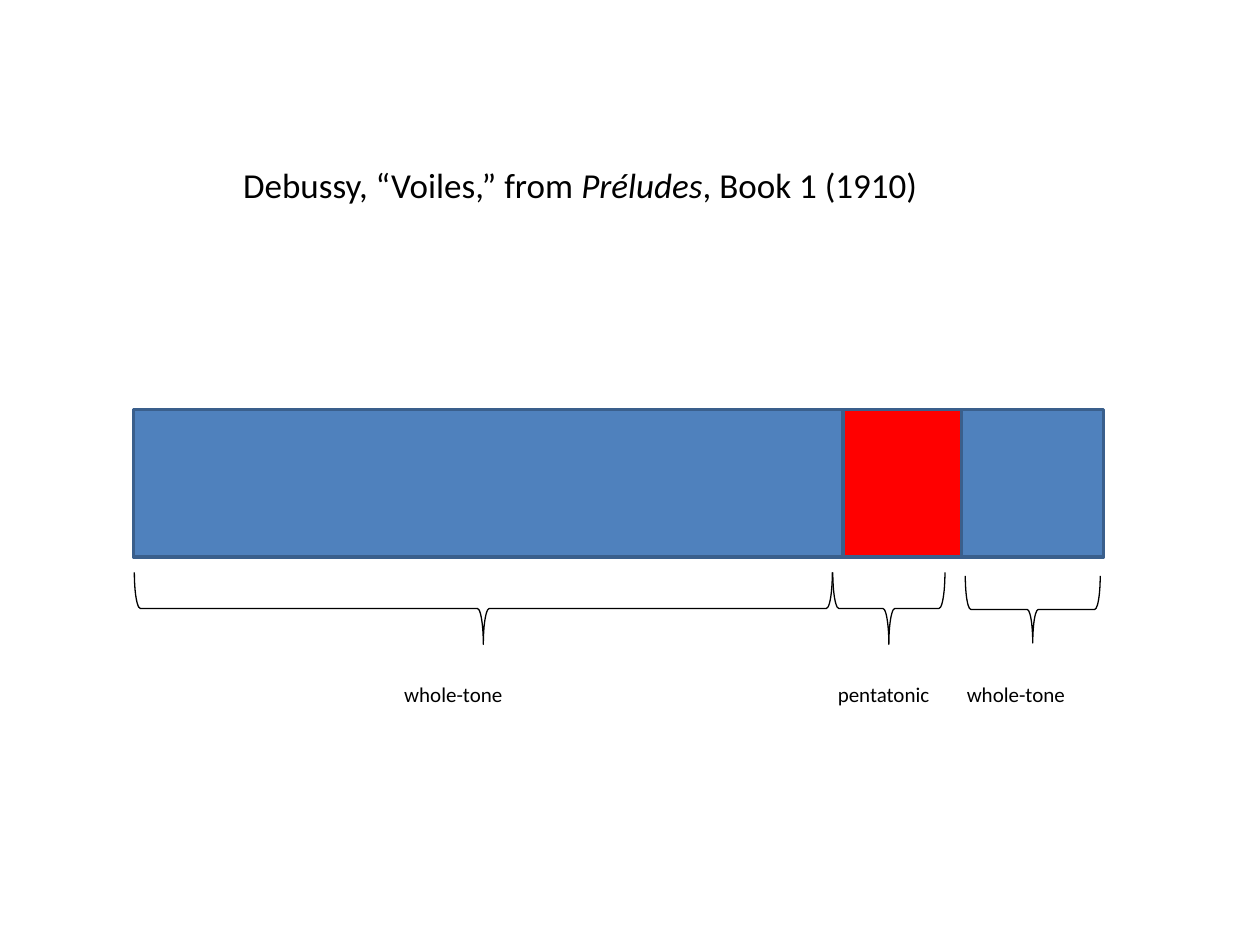
from dataclasses import dataclass

from pptx import Presentation
from pptx.dml.color import RGBColor as RGB
from pptx.enum.shapes import MSO_SHAPE as Shape
from pptx.util import Cm, Pt


@dataclass(frozen=True)
class Theme:
    font: str = "Calibri"
    ink: RGB = RGB(0x00, 0x00, 0x00)
    whole_tone: RGB = RGB(0x4F, 0x81, 0xBD)
    pentatonic: RGB = RGB(0xFF, 0x00, 0x00)
    outline: RGB = RGB(0x3A, 0x5F, 0x8C)
    title_size: int = 20
    label_size: int = 12


@dataclass(frozen=True)
class Section:
    """One part of the form; each span is (offset from the diagram's left, width)."""
    name: str
    fill: RGB
    bar: tuple
    brace: tuple
    brace_top: float
    brace_height: float
    label_left: float


THEME = Theme()
SECTIONS = [
    Section("whole-tone", THEME.whole_tone, (0, 15.54), (0.02, 14.07), 3.28, 1.45, 5.21),
    Section("pentatonic", THEME.pentatonic, (14.3, 2.39), (14.1, 2.26), 3.28, 1.45, 13.95),
    Section("whole-tone", THEME.whole_tone, (16.69, 2.87), (16.77, 2.72), 3.35, 1.35, 16.55),
]
BAR_HEIGHT = 2.97
LABEL_TOP, LABEL_WIDTH, LABEL_HEIGHT = 5.35, 2.9, 0.76


def add_run(p, text, size, italic=False):
    r = p.add_run()
    r.text = text
    r.font.name = THEME.font
    r.font.size = Pt(size)
    r.font.italic = italic
    r.font.color.rgb = THEME.ink


def add_text(s, text, left, top, width, height, size, italic=None):
    """Add a text box; the part of text equal to italic is slanted."""
    tf = s.shapes.add_textbox(Cm(left), Cm(top), Cm(width), Cm(height)).text_frame
    tf.word_wrap = True
    p = tf.paragraphs[0]
    before, slanted, after = text.partition(italic) if italic else (text, "", "")
    for part in filter(None, (before, slanted, after)):
        add_run(p, part, size, italic=part == italic)


def add_bar(s, fill, left, top, width, height):
    sp = s.shapes.add_shape(Shape.RECTANGLE, Cm(left), Cm(top), Cm(width), Cm(height))
    sp.shadow.inherit = False
    sp.fill.solid()
    sp.fill.fore_color.rgb = fill
    sp.line.color.rgb = THEME.outline
    sp.line.width = Pt(2)


def add_brace(s, left, top, width, height):
    """Add a brace pointing down that fills the given box once turned."""
    shift = (width - height) / 2
    sp = s.shapes.add_shape(Shape.LEFT_BRACE, Cm(left + shift), Cm(top - shift),
                            Cm(height), Cm(width))
    sp.rotation = 270
    sp.shadow.inherit = False
    sp.fill.background()
    sp.line.color.rgb = THEME.ink
    sp.line.width = Pt(0.75)


def add_form_diagram(s, left, top):
    for section in SECTIONS:
        x, width = section.bar
        add_bar(s, section.fill, left + x, top, width, BAR_HEIGHT)
    for section in SECTIONS:
        x, width = section.brace
        add_brace(s, left + x, top + section.brace_top, width, section.brace_height)
        add_text(s, section.name, left + section.label_left, top + LABEL_TOP,
                 LABEL_WIDTH, LABEL_HEIGHT, size=THEME.label_size)


def main():
    prs = Presentation()
    prs.slide_width, prs.slide_height = Cm(25.4), Cm(19.05)
    s = prs.slides.add_slide(prs.slide_layouts[6])
    add_text(s, "Debussy, “Voiles,” from Préludes, Book 1 (1910)", 4.65, 3.18, 15.67, 1.12,
             size=THEME.title_size, italic="Préludes")
    add_form_diagram(s, 2.69, 8.26)
    prs.save("out.pptx")


if __name__ == "__main__":
    main()
